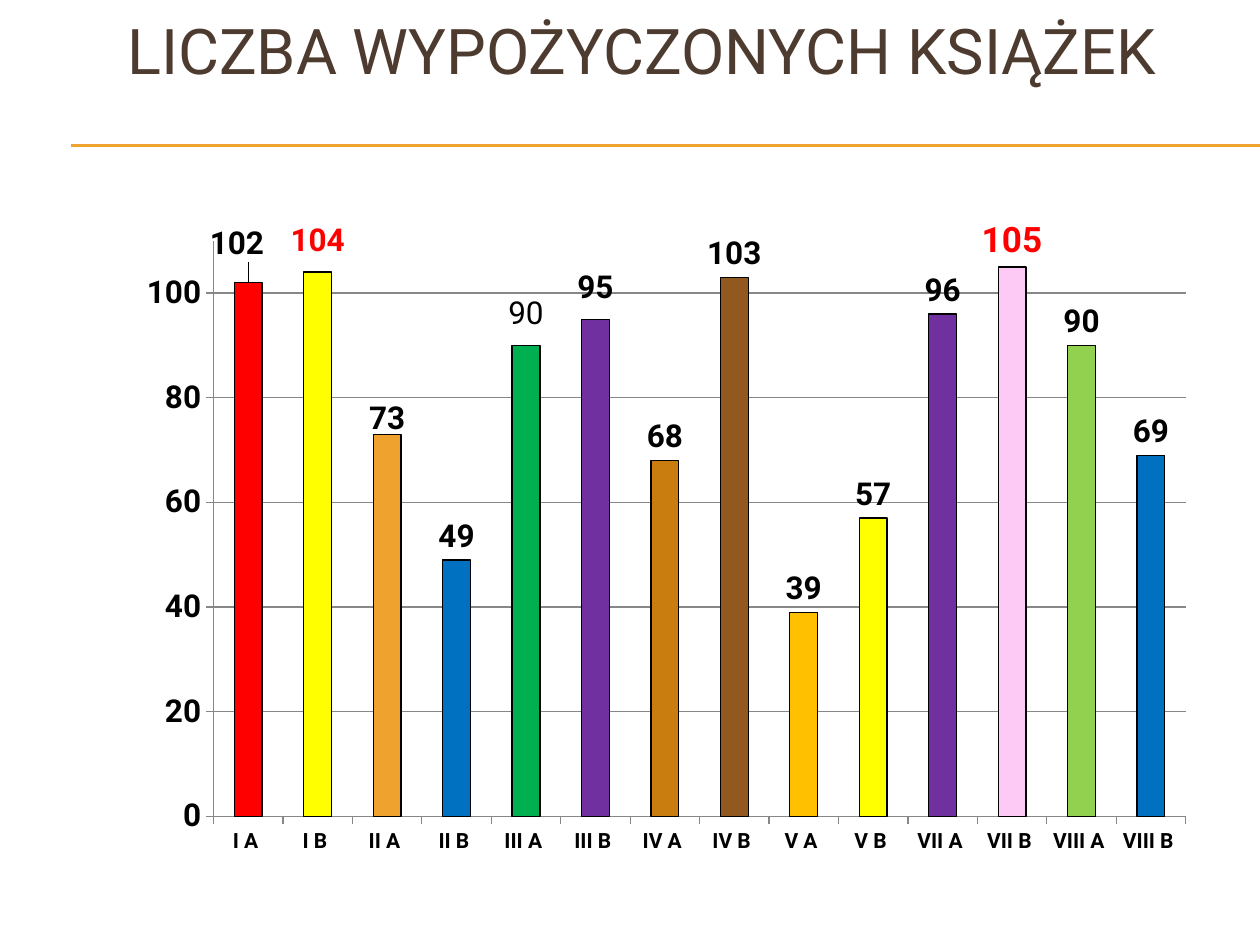
from lxml.etree import SubElement
from pptx import Presentation
from pptx.chart.data import CategoryChartData
from pptx.dml.color import RGBColor
from pptx.enum.chart import XL_CHART_TYPE, XL_LABEL_POSITION, XL_TICK_MARK
from pptx.enum.shapes import MSO_CONNECTOR
from pptx.enum.text import MSO_ANCHOR, PP_ALIGN
from pptx.oxml import parse_xml
from pptx.oxml.ns import nsdecls, qn
from pptx.util import Inches, Pt

FONT = "Roboto"
COLORS = {
    "title": "4E3B30", "rule": "F0A22E", "axis": "878787", "black": "000000",
    "series": "F9E0CD", "red": "FF0000", "yellow": "FFFF00", "orange": "F0A22E",
    "blue": "0070C0", "green": "00B050", "purple": "7030A0", "ochre": "C87D0E",
    "brown": "91581F", "amber": "FFC000", "pink": "FCCAF5", "lime": "92D050",
}
GRADES = ["I", "II", "III", "IV", "V", "VII", "VIII"]
LOANS = [102, 104, 73, 49, 90, 95, 68, 103, 39, 57, 96, 105, 90, 69]
BARS = ["red", "yellow", "orange", "blue", "green", "purple", "ochre",
        "brown", "amber", "yellow", "purple", "pink", "lime", "blue"]
# bar index: (shift right, shift down, size, bold, colour); shifts are shares of the chart
SPECIAL_LABELS = {
    0: (-0.01, -0.02, 18, True, "black"),
    1: (0, -0.01, 18, True, "red"),
    2: (0, 0.01, 18, True, "black"),
    4: (0, -0.01, 18, False, "black"),
    5: (0, -0.01, 18, True, "black"),
    11: (0, 0, 20, True, "red"),
}


def color(name):
    return RGBColor.from_string(COLORS[name])


def manual_layout(left, top, **sizes):
    """Chart layout element; with sizes it places an inner plot area."""
    layout = parse_xml(f"<c:layout {nsdecls('c')}><c:manualLayout/></c:layout>")
    settings = {"x": left, "y": top}
    if sizes:
        settings = {"layoutTarget": "inner", "xMode": "edge", "yMode": "edge",
                    **settings, **sizes}
    for tag, value in settings.items():
        SubElement(layout[0], qn(f"c:{tag}")).set("val", str(value))
    return layout


deck = Presentation()
deck.slide_width, deck.slide_height = Inches(10), Inches(7.5)
page = deck.slides.add_slide(deck.slide_layouts[6])

# Double rule under the title
for height in (1.15, 1.16):
    rule = page.shapes.add_connector(
        MSO_CONNECTOR.STRAIGHT, Inches(0.56), Inches(height), deck.slide_width, Inches(height))
    rule.line.color.rgb = color("rule")
    rule.line.width = Pt(0.75)
    SubElement(rule._element.spPr, qn("a:effectLst"))

# Title
title = page.shapes.add_textbox(Inches(0.5), 0, Inches(9.19), Inches(0.78))
frame = title.text_frame
frame.word_wrap = True
frame.vertical_anchor = MSO_ANCHOR.MIDDLE
para = frame.paragraphs[0]
para.text = "LICZBA WYPOŻYCZONYCH KSIĄŻEK"
para.alignment = PP_ALIGN.CENTER
para.font.name, para.font.size = FONT, Pt(36)
para.font.color.rgb = color("title")

# Column chart
data = CategoryChartData()
data.categories = [f"{grade} {section} " for grade in GRADES for section in "AB"]
data.add_series("Series 1", LOANS)
chart = page.shapes.add_chart(
    XL_CHART_TYPE.COLUMN_CLUSTERED, Inches(0.59), Inches(1.07), Inches(8.91), Inches(6.14),
    data).chart
chart.has_title = chart.has_legend = False
chart.font.name, chart.font.size = FONT, Pt(18)
chart.font.color.rgb = color("black")

for axis, size in ((chart.category_axis, 12), (chart.value_axis, 18)):
    axis.major_tick_mark = XL_TICK_MARK.OUTSIDE
    axis.minor_tick_mark = XL_TICK_MARK.NONE
    axis.tick_labels.font.size = Pt(size)
    axis.tick_labels.font.bold = True
    axis.format.line.color.rgb = color("axis")
    axis.format.line.width = Pt(0.75)

scale = chart.value_axis
scale.minimum_scale, scale.maximum_scale, scale.major_unit = 0, 110, 20
scale.tick_labels.number_format = "#,##0"
scale.tick_labels.number_format_is_linked = False
scale.has_major_gridlines = True
scale.major_gridlines.format.line.color.rgb = color("axis")
scale.major_gridlines.format.line.width = Pt(0.75)

plot = chart.plots[0]
plot.gap_width = 150
plot.vary_by_categories = False
plot_area = plot._element.getparent()
for layout in plot_area.findall(qn("c:layout")):
    plot_area.remove(layout)
plot_area.insert(0, manual_layout(0.124, 0.137, w=0.866, h=0.744))

series = plot.series[0]
series.invert_if_negative = False
series.format.fill.solid()
series.format.fill.fore_color.rgb = color("series")
for index, name in enumerate(BARS):
    bar = series.points[index].format
    bar.fill.solid()
    bar.fill.fore_color.rgb = color(name)
    bar.line.color.rgb = color("black")
    bar.line.width = Pt(0.75)

# Value labels
labels = series.data_labels
labels.show_value = True
labels.position = XL_LABEL_POSITION.OUTSIDE_END
labels.font.name, labels.font.size, labels.font.bold = FONT, Pt(18), True
labels.font.color.rgb = color("black")
for index, (right, down, size, bold, name) in SPECIAL_LABELS.items():
    label = series.points[index].data_label
    label.font.name, label.font.size, label.font.bold = FONT, Pt(size), bold
    label.font.color.rgb = color(name)
    label.position = XL_LABEL_POSITION.OUTSIDE_END
    entry = series._element.xpath(f"c:dLbls/c:dLbl[c:idx/@val='{index}']")[0]
    entry.insert(1, manual_layout(right, down))

deck.save("out.pptx")
